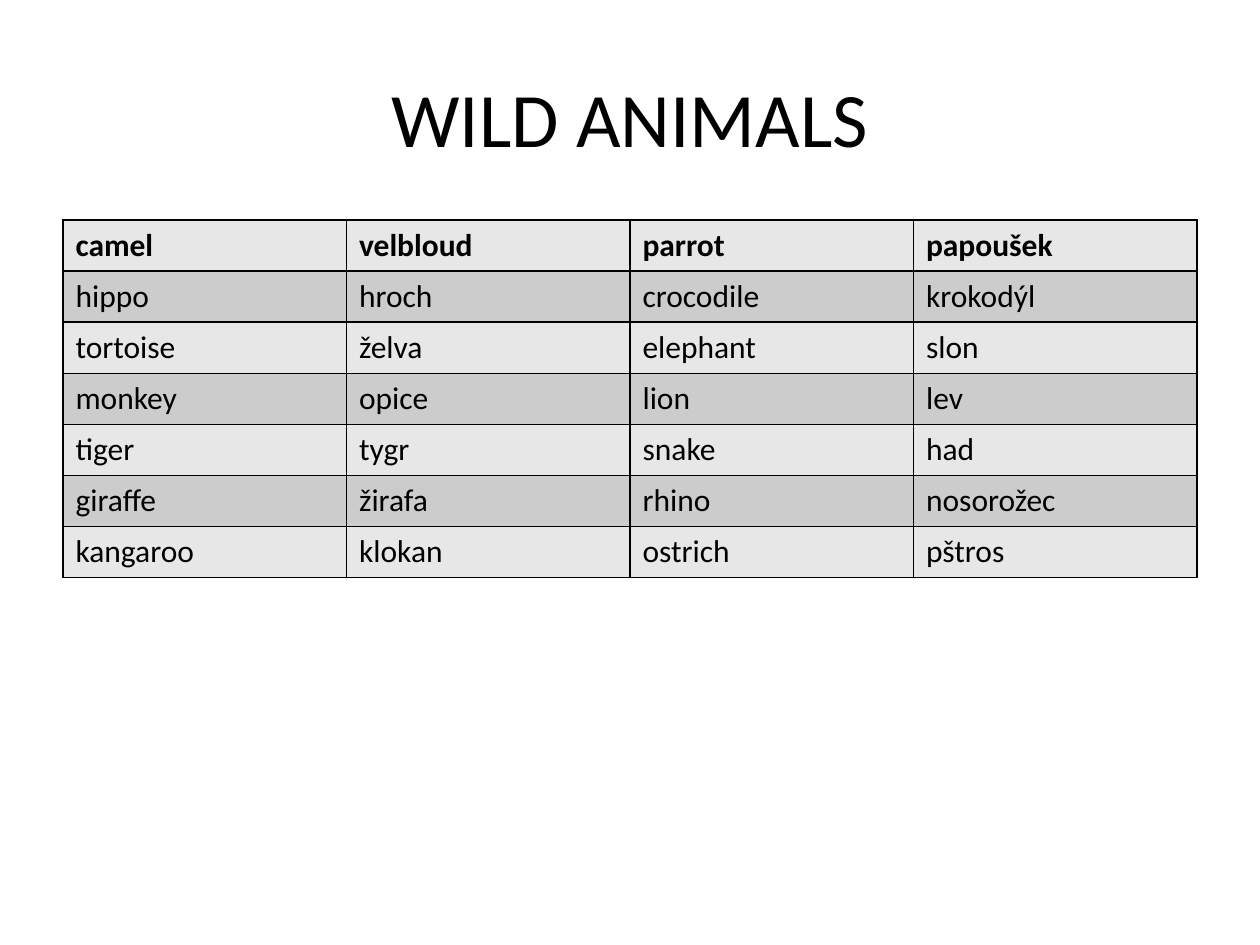
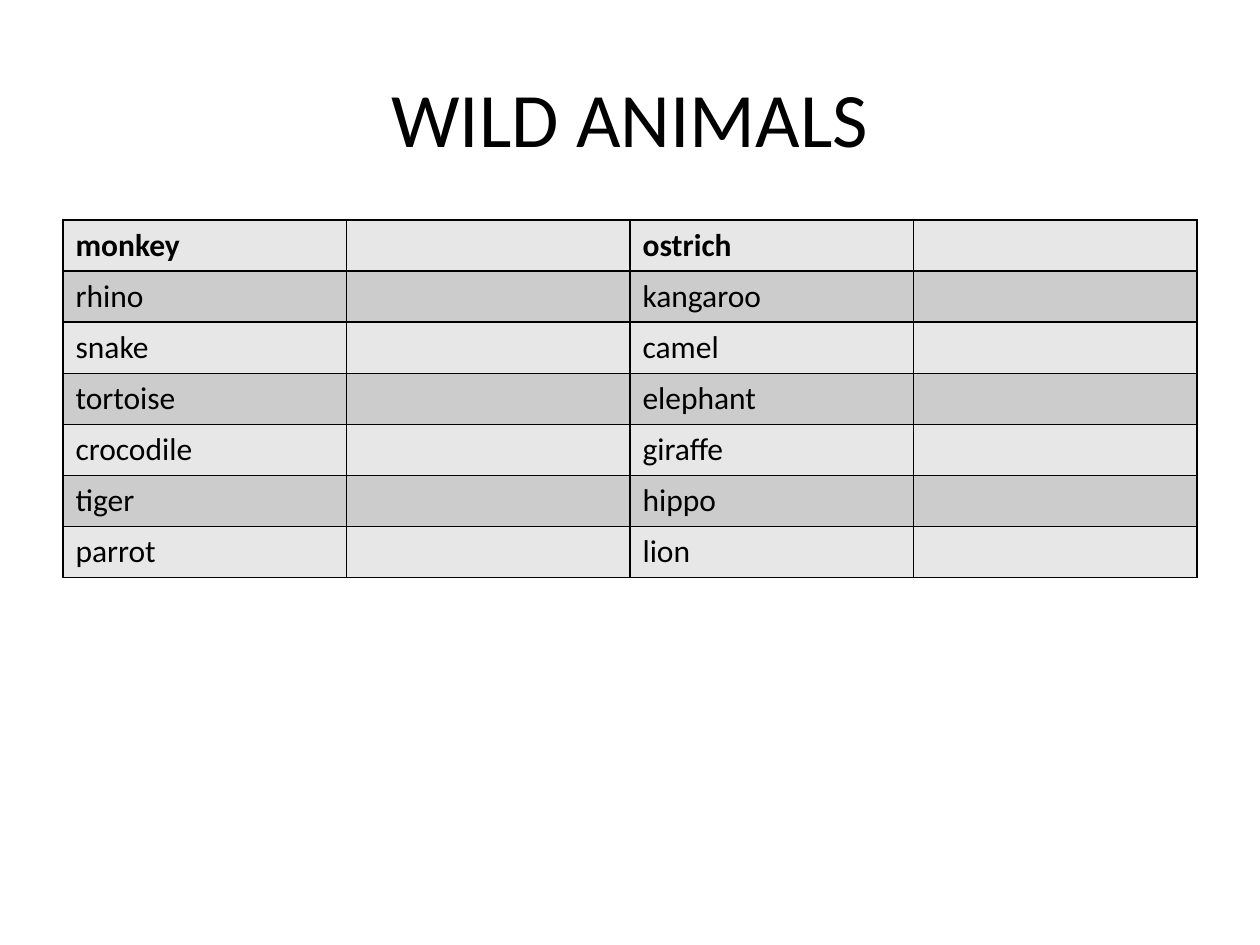
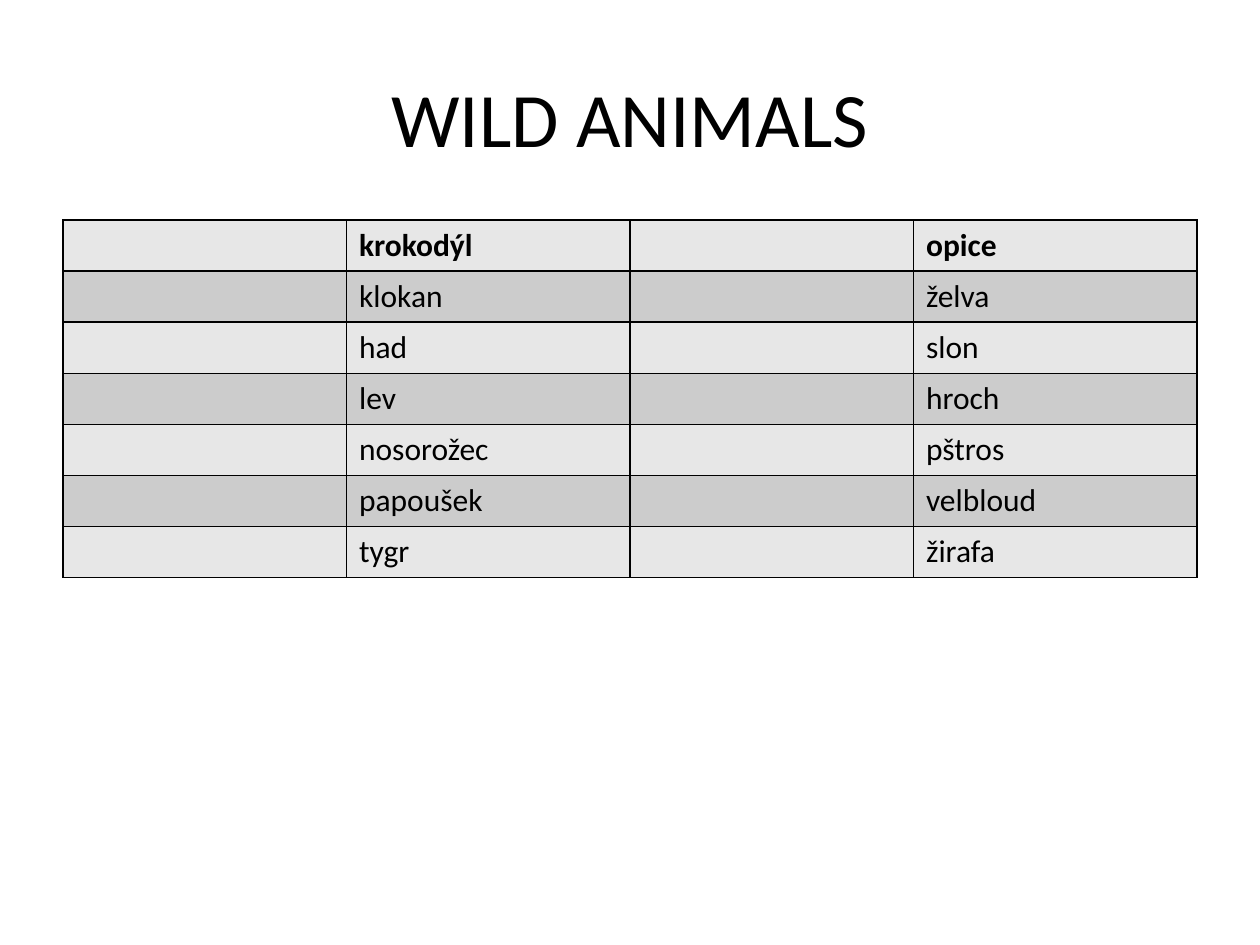
"""Build three slides of wild animal vocabulary: the word list and two exercises."""
from lxml import etree
from pptx import Presentation
from pptx import util as u
from pptx.dml.color import RGBColor
from pptx.enum import text
from pptx.oxml import ns

SCALE = 914400 / 126
FONT = "Calibri"
TITLE = "WILD ANIMALS"
COLORS = {"ink": "000000", "light": "E7E7E7", "dark": "CCCCCC"}
ROWS, COLS = 7, 4
SIDES = ("lnL", "lnR", "lnT", "lnB")

LISTS = [
    {
        0: "camel hippo tortoise monkey tiger giraffe kangaroo",
        1: "velbloud hroch želva opice tygr žirafa klokan",
        2: "parrot crocodile elephant lion snake rhino ostrich",
        3: "papoušek krokodýl slon lev had nosorožec pštros",
    },
    {
        0: "monkey rhino snake tortoise crocodile tiger parrot",
        2: "ostrich kangaroo camel elephant giraffe hippo lion",
    },
    {
        1: "krokodýl klokan had lev nosorožec papoušek tygr",
        3: "opice želva slon hroch pštros velbloud žirafa",
    },
]


def px(*sizes):
    return [u.Emu(round(size * SCALE)) for size in sizes]


def style(par, size, bold):
    for run in par.runs:
        run.font.name = FONT
        run.font.size = u.Pt(size)
        run.font.bold = bold
        run.font.color.rgb = RGBColor.from_string(COLORS["ink"])


deck = Presentation()
deck.slide_width, deck.slide_height = px(1260, 945)

for words in LISTS:
    slide = deck.slides.add_slide(deck.slide_layouts[5])
    title = slide.shapes.title
    title.left, title.top, title.width, title.height = px(63, 38, 1134, 158)
    title.text_frame.text = TITLE
    title.text_frame.vertical_anchor = text.MSO_ANCHOR.MIDDLE
    head = title.text_frame.paragraphs[0]
    head.alignment = text.PP_ALIGN.CENTER
    style(head, 44, False)

    table = slide.shapes.add_table(ROWS, COLS, *px(63, 220, 1134, 358)).table
    table.horz_banding = False
    for col, line in words.items():
        for row, word in enumerate(line.split()):
            cell = table.cell(row, col)
            cell.text_frame.text = word
            style(cell.text_frame.paragraphs[0], 18, row == 0)

    for spot, cell in enumerate(table.iter_cells()):
        props = cell._tc.get_or_add_tcPr()
        for side in SIDES:
            edge = etree.SubElement(props, ns.qn(f"a:{side}"), w=str(u.Pt(1)))
            fill = etree.SubElement(edge, ns.qn("a:solidFill"))
            etree.SubElement(fill, ns.qn("a:srgbClr"), val=COLORS["ink"])
        band = "dark" if spot // COLS % 2 else "light"
        cell.fill.solid()
        cell.fill.fore_color.rgb = RGBColor.from_string(COLORS[band])

deck.save("out.pptx")
